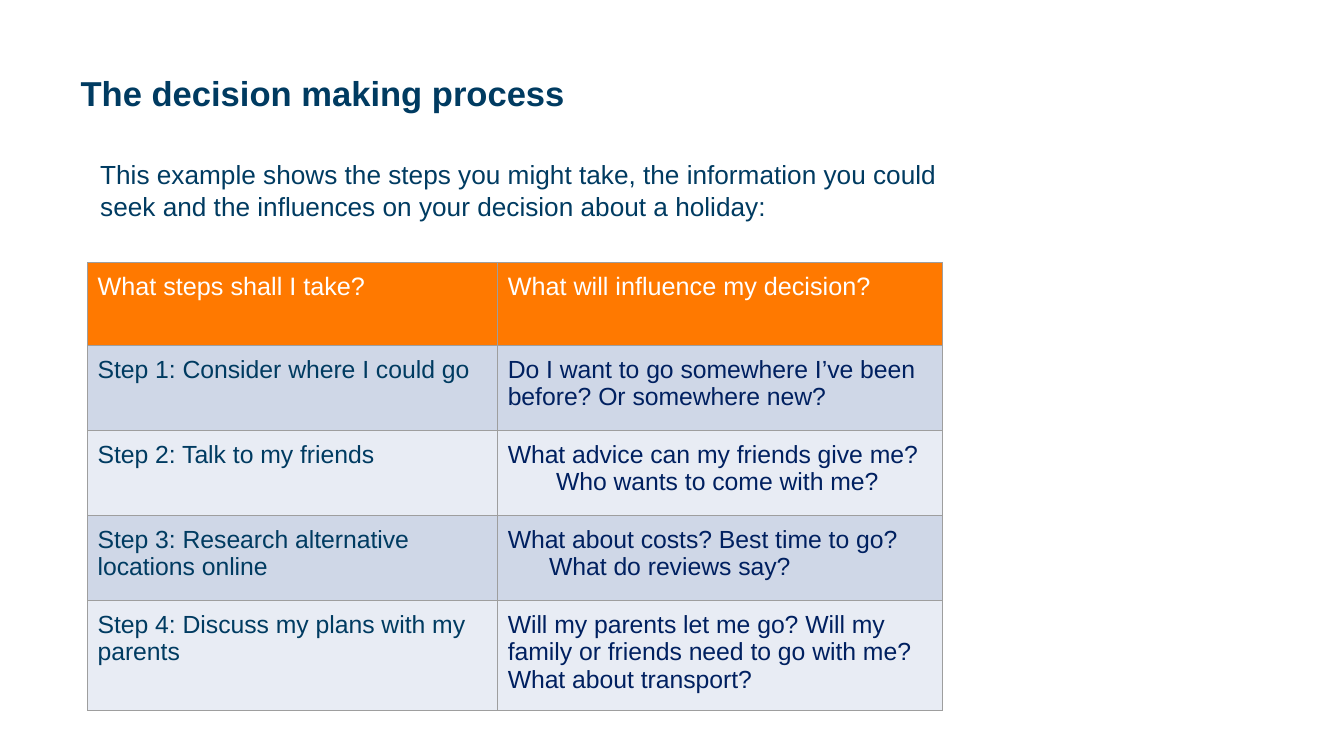
from pptx import Presentation
from pptx.dml.color import RGBColor
from pptx.enum.text import MSO_ANCHOR
from pptx.oxml import parse_xml
from pptx.oxml.ns import nsdecls
from pptx.util import Pt

TOP, MIDDLE = MSO_ANCHOR.TOP, MSO_ANCHOR.MIDDLE
TEAL, NAVY, WHITE = "003B61", "002060", "FFFFFF"
ORANGE, BANDS, GREY = "FF7900", ("CFD7E7", "E8ECF4"), "9E9E9E"
PAD = 7.2

HEADS = ("What steps shall I take?", "What will influence my decision?")
# Each answer is a list of (text, left indent) lines.
STEPS = (
    ("Step 1: Consider where I could go",
     [("Do I want to go somewhere I’ve been before? Or somewhere new?", 0)]),
    ("Step 2: Talk to my friends",
     [("What advice can my friends give me?", 0),
      ("Who wants to come with me?", 34.5)]),
    ("Step 3: Research alternative locations online",
     [("What about costs? Best time to go?", 0),
      ("What do reviews say?", 29.5)]),
    ("Step 4: Discuss my plans with my parents",
     [("Will my parents let me go? Will my family or friends need to go "
       "with me? What about transport?", 0)]),
)


def color(code):
    return RGBColor.from_string(code)


def write(frame, lines, size, ink, bold=False):
    """Fill a text frame with (text, left indent) lines."""
    for i, (text, indent) in enumerate(lines):
        para = frame.add_paragraph() if i else frame.paragraphs[0]
        if indent:
            para._p.get_or_add_pPr().set("marL", str(Pt(indent)))
        run = para.add_run()
        run.text = text
        font = run.font
        font.name, font.size, font.bold = "Arial", Pt(size), bold
        font.color.rgb = color(ink)


def label(slide, box, text, side=PAD, edge=PAD, anchor=TOP, **style):
    frame = slide.shapes.add_textbox(*map(Pt, box)).text_frame
    frame.word_wrap = True
    frame.vertical_anchor = anchor
    frame.margin_left = frame.margin_right = Pt(side)
    frame.margin_top = frame.margin_bottom = Pt(edge)
    write(frame, [(text, 0)], **style)


def border(cell):
    props = cell._tc.get_or_add_tcPr()
    for i, side in enumerate(("lnL", "lnR", "lnT", "lnB")):
        props.insert(i, parse_xml(
            f'<a:{side} {nsdecls("a")} w="{Pt(0.75)}"><a:solidFill>'
            f'<a:srgbClr val="{GREY}"/></a:solidFill></a:{side}>'))


def fill_cell(cell, lines, back, **style):
    cell.fill.solid()
    cell.fill.fore_color.rgb = color(back)
    cell.margin_left = cell.margin_right = Pt(PAD)
    cell.margin_top = cell.margin_bottom = Pt(PAD)
    border(cell)
    write(cell.text_frame, lines, **style)


def step_table(slide, box, widths, heights):
    table = slide.shapes.add_table(
        len(heights), len(widths), *map(Pt, box)).table
    for col, width in zip(table.columns, widths):
        col.width = Pt(width)
    for row, height in zip(table.rows, heights):
        row.height = Pt(height)
    for i, head in enumerate(HEADS):
        fill_cell(table.cell(0, i), [(head, 0)], ORANGE, size=18, ink=WHITE)
    for i, (step, answer) in enumerate(STEPS):
        back = BANDS[i % 2]
        fill_cell(table.cell(i + 1, 0), [(step, 0)], back, size=17.7, ink=TEAL)
        fill_cell(table.cell(i + 1, 1), answer, back, size=17.7, ink=NAVY)


def main():
    deck = Presentation()
    deck.slide_width, deck.slide_height = Pt(960), Pt(540)
    slide = deck.slides.add_slide(deck.slide_layouts[6])
    label(slide, (48, 21, 864, 90), "The decision making process",
          side=9.6, edge=4.8, anchor=MIDDLE, size=24.7, ink=TEAL, bold=True)
    step_table(slide, (62.5, 187.5, 611, 315), (293, 318),
               (59.5, 60.7, 60.7, 60.7, 73))
    label(slide, (64.5, 106, 645, 69),
          "This example shows the steps you might take, the information you "
          "could seek and the influences on your decision about a holiday:",
          size=18.7, ink=TEAL)
    deck.save("out.pptx")


if __name__ == "__main__":
    main()
